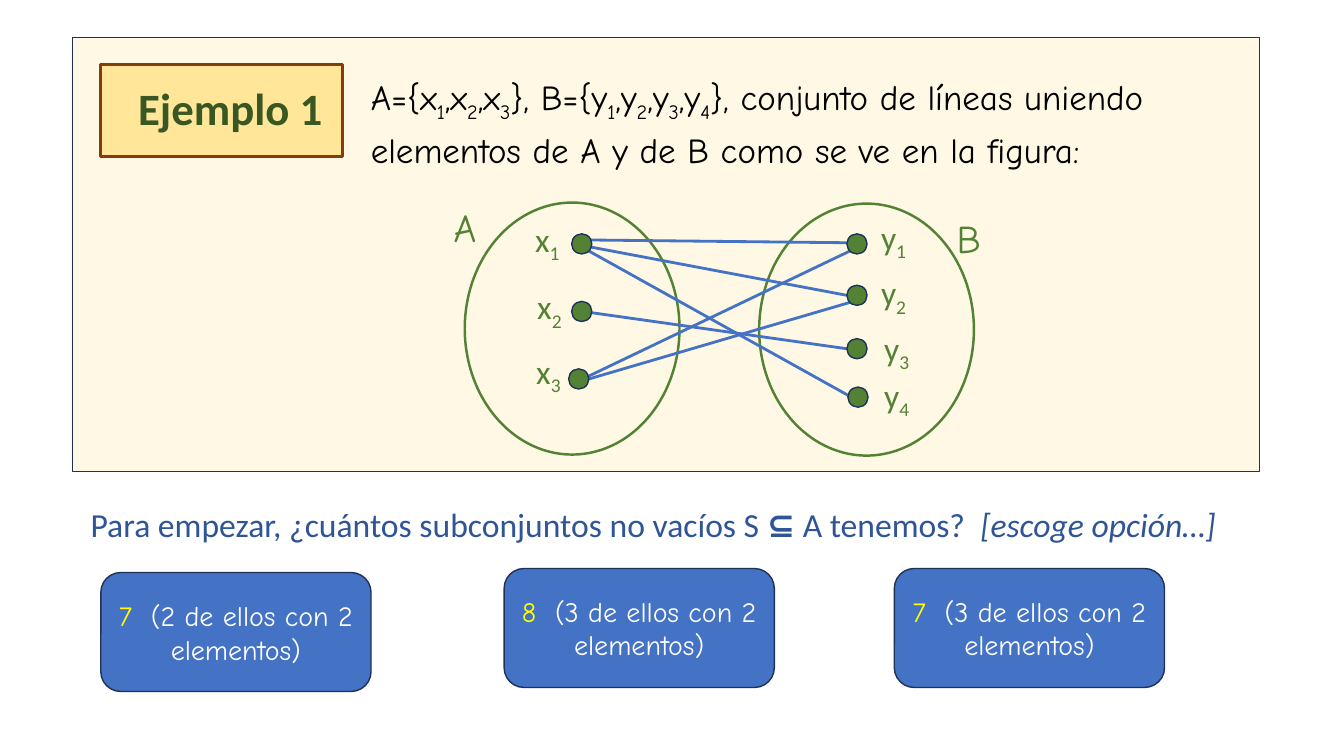
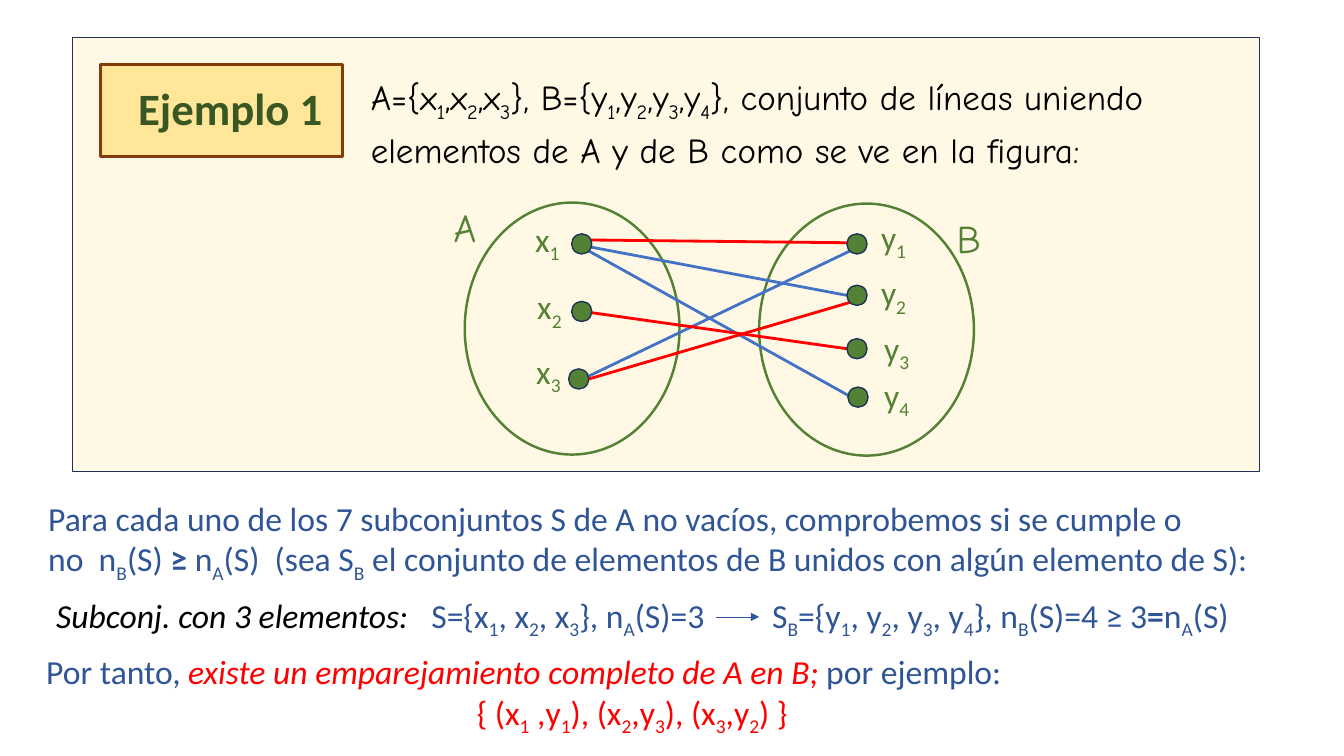
import lxml.etree
import pptx
import pptx.util
import pptx.dml.color
import pptx.enum.shapes
import pptx.enum.text
import pptx.oxml.ns

Inches = pptx.util.Inches
Pt = pptx.util.Pt
Kind = pptx.enum.shapes.MSO_SHAPE
Align = pptx.enum.text.PP_ALIGN
Anchor = pptx.enum.text.MSO_ANCHOR
qn = pptx.oxml.ns.qn

SANS, COMIC = "Calibri", "Comic Neue"
CREAM, GOLD, BROWN = "FFF2CC", "FFE699", "843C0B"
GREEN, DARK, NAVY = "548235", "385723", "1E3256"
BLUE, INK, RED = "4472C4", "2F5597", "FF0000"
BLACK, WHITE, YELLOW = "000000", "FFFFFF", "FFFF00"

DOTS = {
    "x1": (1.27, 0.35), "x2": (1.27, 1.02), "x3": (1.24, 1.69),
    "y1": (4, 0.35), "y2": (4, 0.86), "y3": (4, 1.39), "y4": (4.01, 1.87),
}
LABELS = {
    "x1": (0.81, 0.15), "x2": (0.83, 0.82), "x3": (0.82, 1.46),
    "y1": (4.24, 0.13), "y2": (4.24, 0.68), "y3": (4.27, 1.23), "y4": (4.27, 1.7),
}
EDGES = {
    ("x1", "y1"): (1.37, 0.41, 4.16, 0.44),
    ("x1", "y2"): (1.4, 0.47, 4, 0.96),
    ("x1", "y4"): (1.44, 0.52, 4.17, 2.04),
    ("x3", "y1"): (1.4, 1.78, 4.03, 0.52),
    ("x3", "y2"): (1.44, 1.79, 4.03, 1.03),
    ("x2", "y3"): (1.38, 1.12, 4, 1.49),
}
MATCH = {("x1", "y1"), ("x2", "y3"), ("x3", "y2")}


def paint(target, color):
    if hasattr(target, "solid"):
        target.solid()
        target = target.fore_color
    else:
        target = target.color
    target.rgb = pptx.dml.color.RGBColor.from_string(color)


def add_tag(parent, name, **attrs):
    return lxml.etree.SubElement(parent, qn(name), attrs)


def add_runs(par, text, size, font, color, style=""):
    head, *rest = text.split("_")
    bits = [(head, False)]
    for part in rest:
        bits += [(part[0], True), (part[1:], False)]
    for words, sub in bits:
        if not words:
            continue
        run = par.add_run()
        run.text = words
        run.font.size = Pt(size)
        run.font.name = font
        run.font.bold = "b" in style
        run.font.italic = "i" in style
        paint(run.font, color)
        if sub:
            run.font._element.set("baseline", "-25000")


def fill_text(frame, lines, size, font, align=None):
    for i, line in enumerate(lines):
        par = frame.add_paragraph() if i else frame.paragraphs[0]
        par.alignment = align
        for text, *look in line:
            add_runs(par, text, size, font, *look)


def add_text(slide, box, lines, size=24, font=SANS, wrap=True):
    frame = slide.shapes.add_textbox(*map(Inches, box)).text_frame
    frame.word_wrap = wrap
    fill_text(frame, lines, size, font)
    return frame


def add_box(slide, kind, box, fill, line, width=1):
    shape = slide.shapes.add_shape(kind, *map(Inches, box))
    shape.shadow.inherit = False
    if fill:
        paint(shape.fill, fill)
    else:
        shape.fill.background()
    paint(shape.line.fill, line)
    shape.line.width = Pt(width)
    return shape


def add_line(slide, ends, color, width):
    line = slide.shapes.add_connector(
        pptx.enum.shapes.MSO_CONNECTOR.STRAIGHT, *map(Inches, ends))
    paint(line.line.fill, color)
    line.line.width = Pt(width)
    add_tag(line._element.spPr, "a:effectLst")
    return line


def draw_graph(slide, left, top, marked):
    for x, y in ((0.21, 0.04), (3.13, 0.05)):
        add_box(slide, Kind.OVAL, (left + x, top + y, 2.13, 2.5), None, GREEN, 1.75)
    for name, x, y in (("A", 0, 0), ("B", 4.99, 0.11)):
        add_text(slide, (left + x, top + y, 0.47, 0.57), [[(name, GREEN)]],
                 28, COMIC, False)
    for pair, (x1, y1, x2, y2) in EDGES.items():
        add_line(slide, (left + x1, top + y1, left + x2, top + y2),
                 RED if pair in marked else BLUE, 2)
    for name, (x, y) in DOTS.items():
        add_box(slide, Kind.OVAL, (left + x, top + y, 0.2, 0.2), GREEN, NAVY)
        x, y = LABELS[name]
        add_text(slide, (left + x, top + y, 0.47, 0.5),
                 [[(name[0] + "_" + name[1], GREEN)]], wrap=False)


def draw_panel(slide, left, top, marked=()):
    panel = add_box(slide, Kind.RECTANGLE, (left, top, 11.77, 4.31), CREAM, NAVY)
    tint = panel._element.spPr.find(qn("a:solidFill"))[0]
    add_tag(tint, "a:alpha", val="50000")

    frame = add_text(slide, (left + 2.86, top + 0.34, 9.03, 1.24), [
        [("A={x_1,x_2,x_3}, B={y_1,y_2,y_3,y_4}, conjunto de líneas uniendo", BLACK)],
        [("elementos de A y de B como se ve en la figura:", BLACK)],
    ], 25, COMIC)
    for par in frame.paragraphs:
        par.line_spacing = 0.9
        par.space_before = Pt(10)

    draw_graph(slide, left + 3.68, top + 1.6, marked)

    badge = add_box(slide, Kind.RECTANGLE, (left + 0.28, top + 0.27, 2.4, 0.91),
                    GOLD, BROWN, 2)
    badge.text_frame.margin_left = Inches(0.37)
    badge.text_frame.margin_right = 0
    badge.text_frame.margin_bottom = Inches(0.1)
    fill_text(badge.text_frame, [[("Ejemplo 1", DARK, "b")]], 32, SANS, Align.LEFT)


def draw_choice(slide, left, top, count, note):
    card = add_box(slide, Kind.ROUNDED_RECTANGLE, (left, top, 2.68, 1.18), BLUE, NAVY)
    card.text_frame.vertical_anchor = Anchor.MIDDLE
    fill_text(card.text_frame, [[(count, YELLOW), (note, WHITE)]],
              20, COMIC, Align.CENTER)


def draw_quiz(slide, left, top):
    add_text(slide, (left, top, 11.8, 0.5), [[
        ("Para empezar, ¿cuántos subconjuntos no vacíos S ", INK),
        ("⊆ ", INK, "b"),
        ("A tenemos?  ", INK),
        ("[escoge opción…]", INK, "i"),
    ]])
    for x, y, count, pairs in ((0.2, 0.73, 7, 2), (4.2, 0.69, 8, 3), (8.07, 0.69, 7, 3)):
        draw_choice(slide, left + x, top + y, str(count),
                    f"  ({pairs} de ellos con 2 elementos)")


def draw_proof(slide, left, top):
    add_text(slide, (left, top, 12.9, 0.91), [
        [("Para cada uno de los 7 subconjuntos S de A no vacíos, "
          "comprobemos si se cumple o", INK)],
        [("no  n_B(S) ", INK), ("≥ ", INK, "b"),
         ("n_A(S)  (sea S_B el conjunto de elementos de B "
          "unidos con algún elemento de S):", INK)],
    ])
    row = top + 0.96
    for x, width, line in (
        (0.08, 3.9, [("Subconj. con 3 elementos:", BLACK, "i")]),
        (3.8, 3.1, [("S={x_1, x_2, x_3}, n_A(S)=3", INK)]),
        (7.18, 5.2, [("S_B={y_1, y_2, y_3, y_4}, n_B(S)=4 ≥ 3", INK),
                     ("=", INK, "b"), ("n_A(S)", INK)]),
    ):
        add_text(slide, (left + x, row, width, 0.5), [line])
    arrow = add_line(slide, (left + 6.72, row + 0.27, left + 7.15, row + 0.27), INK, 0.5)
    add_tag(arrow._element.spPr.find(qn("a:ln")), "a:tailEnd", type="triangle")

    frame = add_text(slide, (left - 0.02, top + 1.52, 11.82, 0.91), [
        [("Por tanto, ", INK),
         ("existe un emparejamiento completo de A en B; ", RED, "i"),
         ("por ejemplo:", INK)],
        [("{ (x_1 ,y_1), (x_2,y_3), (x_3,y_2) }", RED)],
    ])
    frame.paragraphs[1].alignment = Align.CENTER


def main():
    deck = pptx.Presentation()
    deck.slide_width = Inches(13.33)
    deck.slide_height = Inches(7.5)
    blank = deck.slide_layouts[6]

    ask = deck.slides.add_slide(blank)
    draw_panel(ask, 0.72, 0.37)
    draw_quiz(ask, 0.8, 4.95)

    solve = deck.slides.add_slide(blank)
    draw_panel(solve, 0.72, 0.37, MATCH)
    draw_proof(solve, 0.38, 4.89)

    deck.save("out.pptx")


if __name__ == "__main__":
    main()
